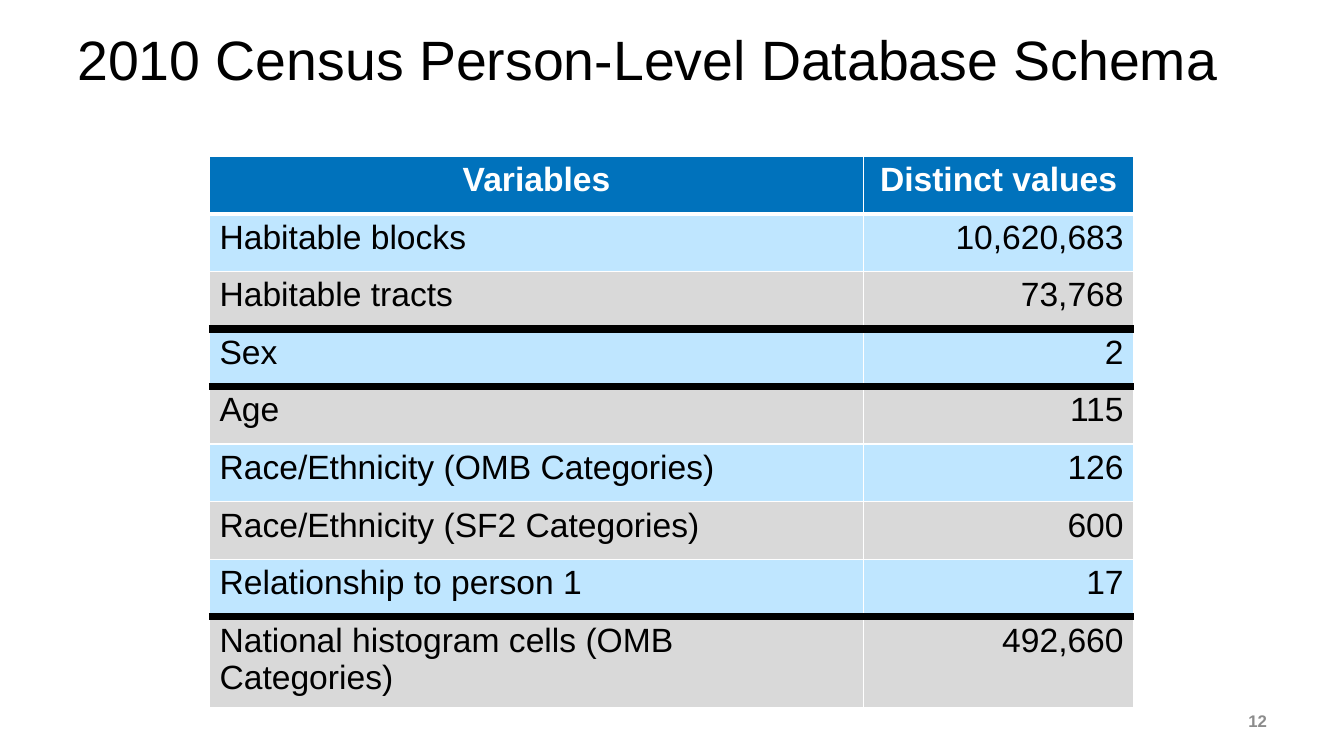
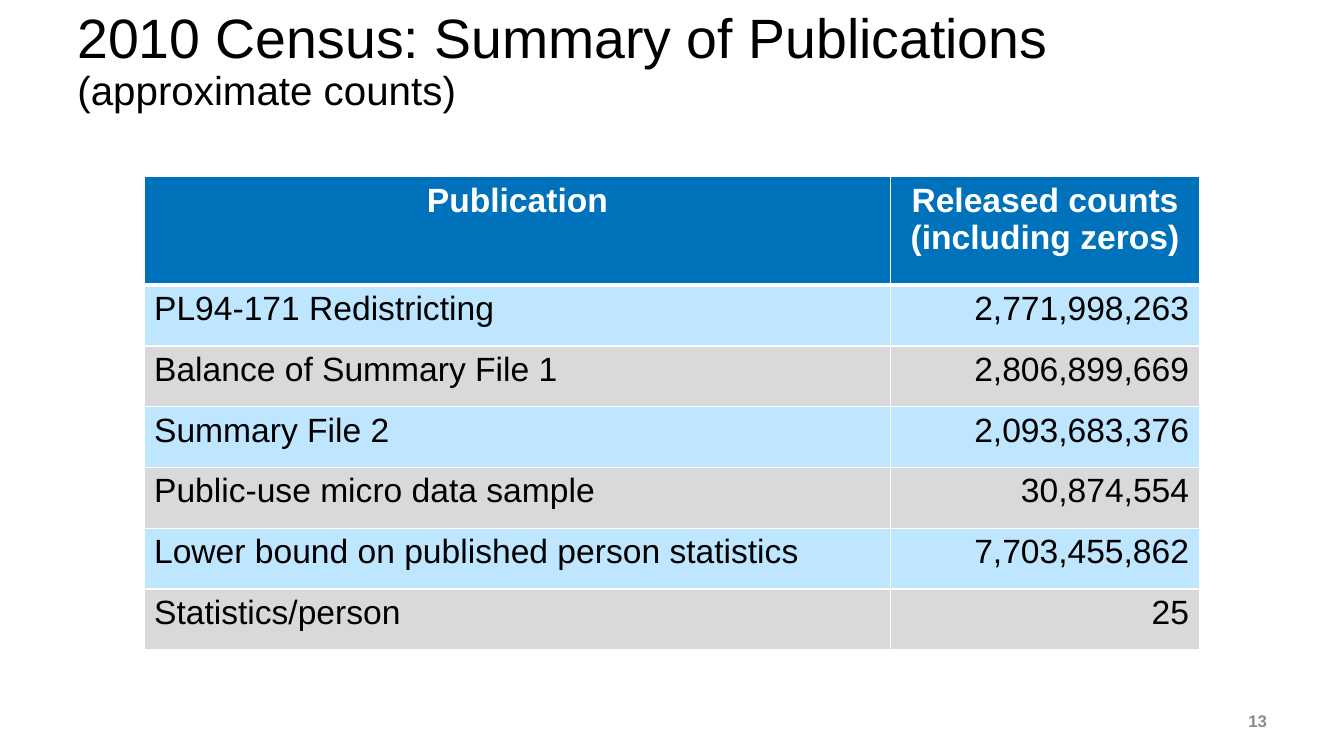
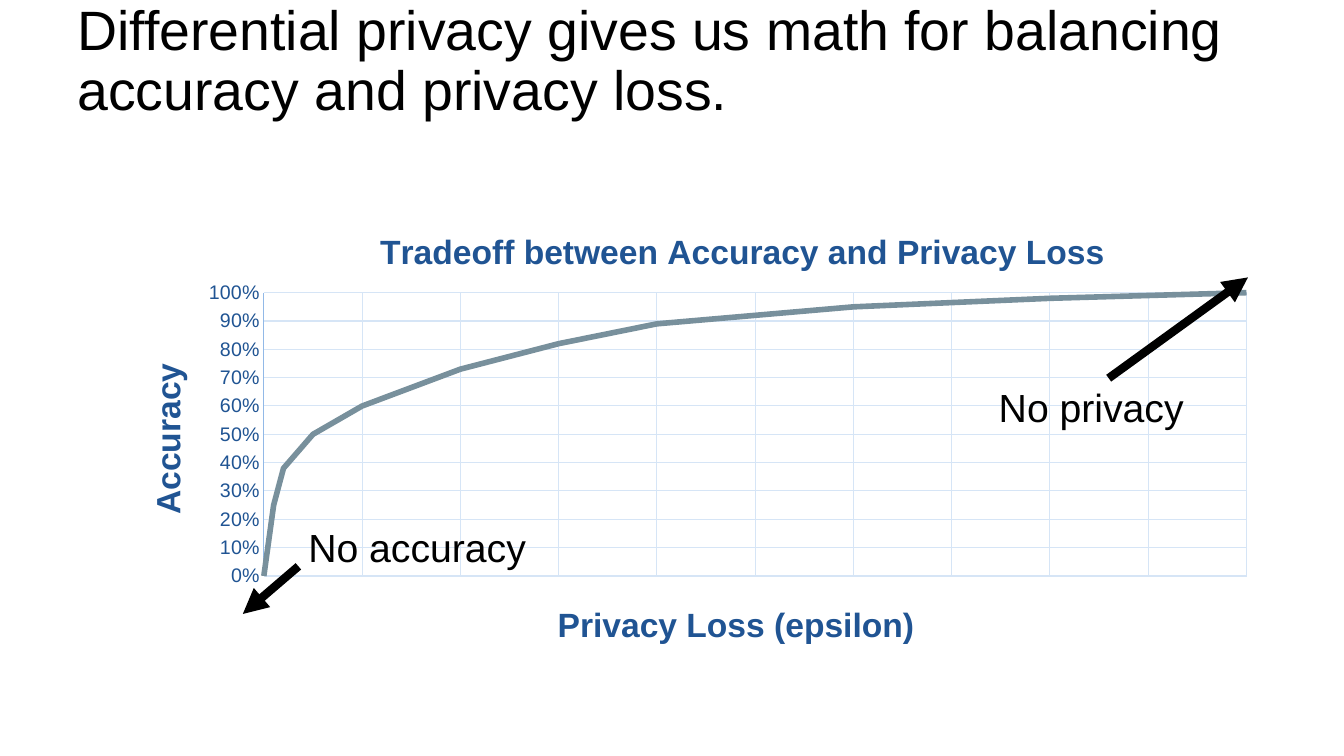
from lxml.etree import SubElement
from pptx import Presentation
from pptx.chart.data import XyChartData
from pptx.dml.color import RGBColor
from pptx.enum.chart import XL_CHART_TYPE as ChartType, XL_TICK_MARK as TickMark
from pptx.enum.shapes import MSO_CONNECTOR as Connector
from pptx.enum.text import MSO_ANCHOR as Anchor, PP_ALIGN as Align
from pptx.oxml import parse_xml
from pptx.oxml.ns import nsdecls, qn
from pptx.util import Cm, Pt

FONT = "Arial"
COLORS = {
    "black": "000000", "white": "FFFFFF", "header": "0072BC",
    "blue band": "BFE6FF", "gray band": "D9D9D9", "number": "8C8C8C",
    "chart text": "205493", "axis": "92B9E7", "grid": "D6E5F6", "curve": "78909C",
}


def color(name):
    return RGBColor.from_string(COLORS[name])


def set_font(font, size, name="black", bold=False):
    font.name, font.size, font.bold = FONT, Pt(size), bold
    font.color.rgb = color(name)


def set_line(line, name, width):
    line.color.rgb = color(name)
    line.width = Pt(width)


def set_borders(cell, top, bottom):
    """Give a cell thin white sides and (colour, points) rules above and below."""
    side = ("white", 1)
    edges = {"lnL": side, "lnR": side, "lnT": top, "lnB": bottom}
    properties = cell._tc.get_or_add_tcPr()
    for index, (tag, (name, width)) in enumerate(edges.items()):
        properties.insert(index, parse_xml(
            f'<a:{tag} {nsdecls("a")} w="{Pt(width)}"><a:solidFill>'
            f'<a:srgbClr val="{COLORS[name]}"/></a:solidFill></a:{tag}>'))


def set_layout(element, index, **fractions):
    """Place a chart part by fractions of the chart area."""
    for old in element.findall(qn("c:layout")):
        element.remove(old)
    layout = parse_xml(f'<c:layout {nsdecls("c")}><c:manualLayout/></c:layout>')
    if "w" in fractions:
        SubElement(layout[0], qn("c:layoutTarget")).set("val", "inner")
    for key in ("x", "y"):
        SubElement(layout[0], qn(f"c:{key}Mode")).set("val", "edge")
    for key, value in fractions.items():
        SubElement(layout[0], qn(f"c:{key}")).set("val", str(value))
    element.insert(index, layout)


def set_chart_title(title, text, x, y):
    title.text_frame.text = text
    set_font(title.text_frame.paragraphs[0].font, 24, "chart text", True)
    set_layout(title.element, 1, x=x, y=y)


class Deck:
    def __init__(self):
        self.deck = Presentation()
        self.deck.slide_width, self.deck.slide_height = Cm(33.87), Cm(19.05)
        self.page = None

    def add_page(self, title, subtitle=None, number=None):
        self.page = self.deck.slides.add_slide(self.deck.slide_layouts[6])
        para = self.text(title, 1.7, 0, 30.48, 3.15, 39.6, anchor=Anchor.MIDDLE)
        para.line_spacing = 0.9
        if subtitle:
            para.add_line_break()
            span = para.add_run()
            span.text = subtitle
            span.font.size = Pt(28.8)
        if number:
            para = self.text(str(number), 24.56, 17.65, 7.62, 1.02, 12, "number",
                             True, Anchor.MIDDLE)
            para.alignment = Align.RIGHT

    def text(self, text, left, top, width, height, size, name="black",
             bold=False, anchor=Anchor.TOP):
        box = self.page.shapes.add_textbox(Cm(left), Cm(top), Cm(width), Cm(height))
        frame = box.text_frame
        frame.word_wrap, frame.vertical_anchor = True, anchor
        para = frame.paragraphs[0]
        para.text = text
        set_font(para.font, size, name, bold)
        return para

    def table(self, rows, left, top, widths, header_height, row_height, heavy_after=()):
        heights = [header_height] + [row_height] * (len(rows) - 1)
        table = self.page.shapes.add_table(
            len(rows), len(widths), Cm(left), Cm(top),
            Cm(sum(widths)), Cm(sum(heights))).table
        table.first_row = table.horz_banding = False
        for column, width in zip(table.columns, widths):
            column.width = Cm(width)
        # Rule 0 is the top edge; rule n lies under row n
        rules = [("white", 1), ("white", 3)] + [
            ("black", 6) if row in heavy_after else ("white", 1)
            for row in range(1, len(rows))]
        for row, values in enumerate(rows):
            table.rows[row].height = Cm(heights[row])
            header = row == 0
            fill = "header" if header else "blue band" if row % 2 else "gray band"
            for column, value in enumerate(values):
                cell = table.cell(row, column)
                cell.fill.solid()
                cell.fill.fore_color.rgb = color(fill)
                set_borders(cell, rules[row], rules[row + 1])
                para = cell.text_frame.paragraphs[0]
                para.text = value
                para.alignment = (Align.CENTER if header
                                  else Align.RIGHT if column else Align.LEFT)
                set_font(para.font, 24, "white" if header else "black", header)

    def curve_chart(self, title, x_title, y_title, points, left, top, width, height):
        data = XyChartData()
        series = data.add_series("Series 1")
        for point in points:
            series.add_data_point(*point)
        chart = self.page.shapes.add_chart(
            ChartType.XY_SCATTER_SMOOTH_NO_MARKERS,
            Cm(left), Cm(top), Cm(width), Cm(height), data).chart
        set_font(chart.font, 10)
        chart.has_legend = False
        set_chart_title(chart.chart_title, title, 0.227, 0.05)
        set_layout(chart.element.find(".//" + qn("c:plotArea")), 0,
                   x=0.132, y=0.2, w=0.847, h=0.614)

        # Curve
        plot = chart.plots[0]
        plot.vary_by_categories = False
        plot.series[0].smooth = True
        set_line(plot.series[0].format.line, "curve", 4)

        # Axes
        x_axis, y_axis = chart.category_axis, chart.value_axis
        for axis, maximum, step in ((x_axis, 10, 1), (y_axis, 1, 0.1)):
            axis.minimum_scale, axis.maximum_scale = 0, maximum
            axis.major_unit = step
            axis.has_major_gridlines = True
            set_line(axis.major_gridlines.format.line, "grid", 0.75)
            axis.major_tick_mark = axis.minor_tick_mark = TickMark.NONE
        x_axis.visible = False
        set_chart_title(x_axis.axis_title, x_title, 0.38, 0.86)
        set_chart_title(y_axis.axis_title, y_title, 0.025, 0.34)
        body = y_axis.axis_title.text_frame._txBody.bodyPr
        body.set("rot", "-5400000")
        body.set("vert", "horz")
        set_line(y_axis.format.line, "axis", 0.75)
        labels = y_axis.tick_labels
        labels.number_format, labels.number_format_is_linked = "0%", False
        set_font(labels.font, 14, "chart text")

    def arrow(self, start, end):
        ends = [Cm(value) for value in (*start, *end)]
        arrow = self.page.shapes.add_connector(Connector.STRAIGHT, *ends)
        set_line(arrow.line, "black", 6)
        properties = arrow.element.spPr
        SubElement(properties.find(qn("a:ln")), qn("a:tailEnd")).set("type", "triangle")
        SubElement(properties, qn("a:effectLst"))


def main():
    deck = Deck()

    # Database schema
    deck.add_page("2010 Census Person-Level Database Schema", number=12)
    deck.table([
        ("Variables", "Distinct values"),
        ("Habitable blocks", "10,620,683"),
        ("Habitable tracts", "73,768"),
        ("Sex", "2"),
        ("Age", "115"),
        ("Race/Ethnicity (OMB Categories)", "126"),
        ("Race/Ethnicity (SF2 Categories)", "600"),
        ("Relationship to person 1", "17"),
        ("National histogram cells (OMB Categories)", "492,660"),
    ], 5.28, 3.94, (16.48, 6.81), 1.45, 1.45, heavy_after=(2, 3, 7))

    # Publications
    deck.add_page("2010 Census: Summary of Publications", "(approximate counts)", 13)
    deck.table([
        ("Publication", "Released counts (including zeros)"),
        ("PL94-171 Redistricting", "2,771,998,263"),
        ("Balance of Summary File 1", "2,806,899,669"),
        ("Summary File 2", "2,093,683,376"),
        ("Public-use micro data sample", "30,874,554"),
        ("Lower bound on published person statistics", "7,703,455,862"),
        ("Statistics/person", "25"),
    ], 3.63, 4.45, (18.82, 7.77), 2.74, 1.53)

    # Accuracy against privacy loss
    deck.add_page("Differential privacy gives us math for balancing "
                  "accuracy and privacy loss.")
    deck.curve_chart(
        "Tradeoff between Accuracy and Privacy Loss", "Privacy Loss (epsilon)", "Accuracy",
        [(0, 0), (0.1, 0.25), (0.2, 0.38), (0.5, 0.5), (1, 0.6), (2, 0.73),
         (3, 0.82), (4, 0.89), (6, 0.95), (8, 0.98), (10, 1)],
        2.79, 5.05, 29.24, 11.63)
    deck.text("No privacy", 24.92, 9.53, 6.05, 1.45, 28)
    deck.arrow((27.94, 9.53), (31.45, 6.99))
    deck.text("No accuracy", 7.52, 13.06, 6.05, 1.45, 28)
    deck.arrow((7.52, 14.27), (6.12, 15.47))

    deck.deck.save("out.pptx")


if __name__ == "__main__":
    main()
